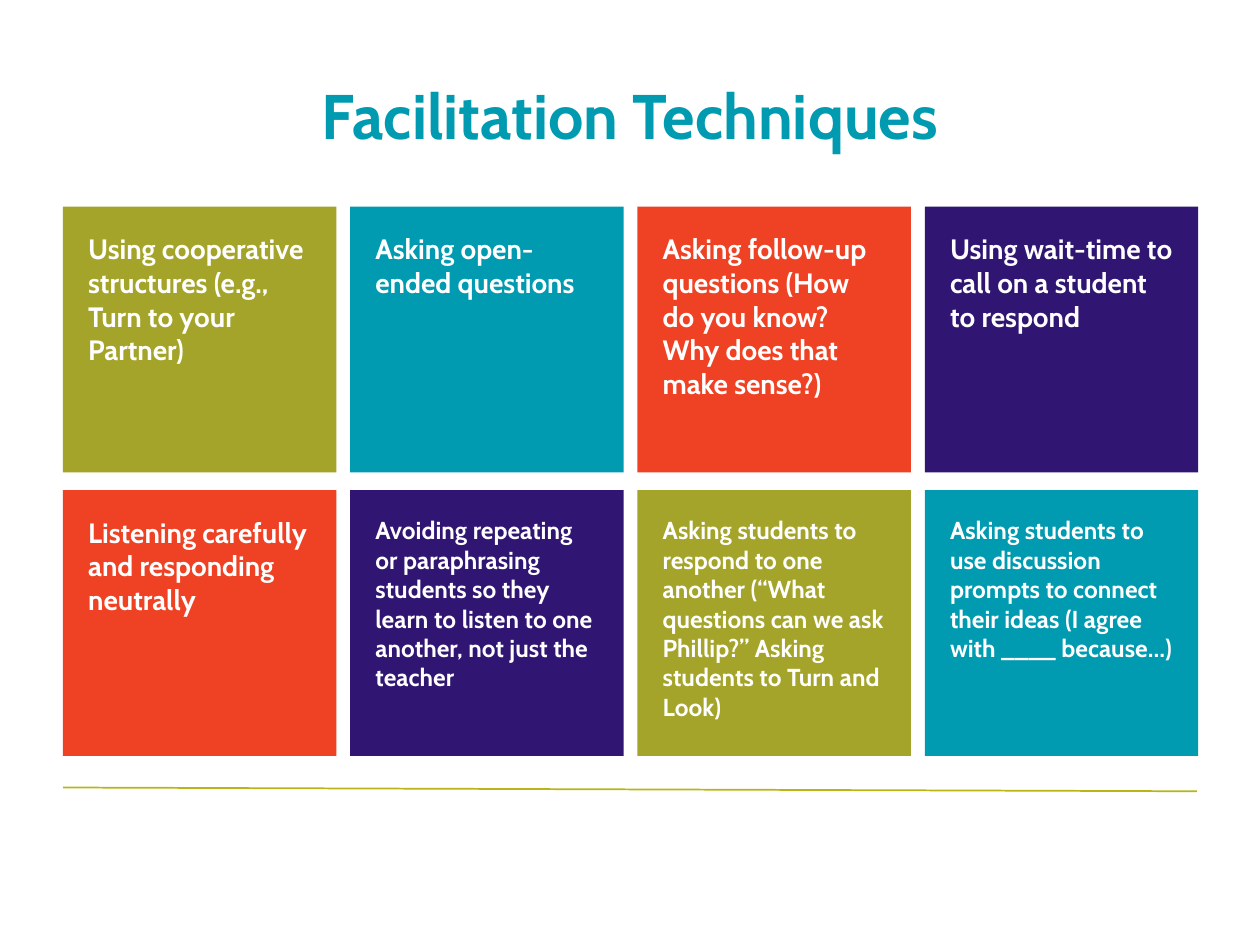
import pptx
import pptx.dml.color
import pptx.enum.shapes
import pptx.enum.text
import pptx.oxml.ns
import pptx.util
from lxml import etree

Inches = pptx.util.Inches
Align = pptx.enum.text.PP_ALIGN
Anchor = pptx.enum.text.MSO_ANCHOR

OLIVE, TEAL, RED, PURPLE = "A5A42A", "009BB0", "EF4123", "301672"
CARDS = [
    [
        ("Using cooperative structures (e.g., Turn to your Partner)", OLIVE, 16),
        ("Asking open-ended questions", TEAL, 16),
        ("Asking follow-up questions (How do you know? Why does that make sense?)", RED, 16),
        ("Using wait-time to call on a student to respond", PURPLE, 16),
    ],
    [
        ("Listening carefully and responding neutrally", RED, 16),
        ("Avoiding repeating or paraphrasing students so they learn to listen "
         "to one another, not just the teacher", PURPLE, 14),
        ("Asking students to respond to one another (“What questions can we ask "
         "Phillip?” Asking students to Turn and Look)", OLIVE, 14),
        ("Asking students to use discussion prompts to connect their ideas "
         "(I agree with ____ because…)", TEAL, 14),
    ],
]


def color(code):
    return pptx.dml.color.RGBColor.from_string(code)


def write(frame, text, size=16, ink="FFFFFF", font="Cabin", bold=True,
          align=Align.LEFT, anchor=Anchor.TOP, inset=(0.2, 0.2)):
    frame.word_wrap = True
    frame.vertical_anchor = anchor
    frame.margin_left = frame.margin_right = Inches(inset[0])
    frame.margin_top = frame.margin_bottom = Inches(inset[1])
    para = frame.paragraphs[0]
    para.alignment = align
    run = para.add_run()
    run.text = text
    run.font.name = font
    run.font.size = pptx.util.Pt(size)
    run.font.bold = bold
    run.font.color.rgb = color(ink)


class Deck:
    """Holds the style and the current slide, and draws each kind of element."""

    def __init__(self, slide, accent=TEAL, rule="B8B615"):
        self.slide = slide
        self.accent = accent
        self.rule = rule

    def title(self, text, *box):
        shape = self.slide.shapes.add_textbox(*map(Inches, box))
        write(shape.text_frame, text, size=36, ink=self.accent,
              align=Align.CENTER, anchor=Anchor.MIDDLE, inset=(0.1, 0.05))

    def card(self, text, fill, size, *box):
        kind = pptx.enum.shapes.MSO_SHAPE.RECTANGLE
        shape = self.slide.shapes.add_shape(kind, *map(Inches, box))
        shape.shadow.inherit = False
        shape.fill.solid()
        shape.fill.fore_color.rgb = color(fill)
        shape.line.fill.background()
        write(shape.text_frame, text, size=size)

    def line(self, *ends):
        kind = pptx.enum.shapes.MSO_CONNECTOR.STRAIGHT
        line = self.slide.shapes.add_connector(kind, *map(Inches, ends))
        line.line.color.rgb = color(self.rule)
        line.line.width = pptx.util.Pt(1)
        etree.SubElement(line._element.spPr, pptx.oxml.ns.qn("a:effectLst"))


def main():
    show = pptx.Presentation()
    show.slide_width, show.slide_height = Inches(10), Inches(7.5)
    deck = Deck(show.slides.add_slide(show.slide_layouts[6]))
    deck.line(0.5, 6.25, 9.5, 6.28)
    deck.title("Facilitation Techniques", 0.5, 0.34, 9, 1.14)
    for row, cards in enumerate(CARDS):
        for col, (text, fill, size) in enumerate(cards):
            left, top = 0.5 + 2.28 * col, 1.64 + 2.25 * row
            deck.card(text, fill, size, left, top, 2.17, 2.11)
    show.save("out.pptx")


if __name__ == "__main__":
    main()
